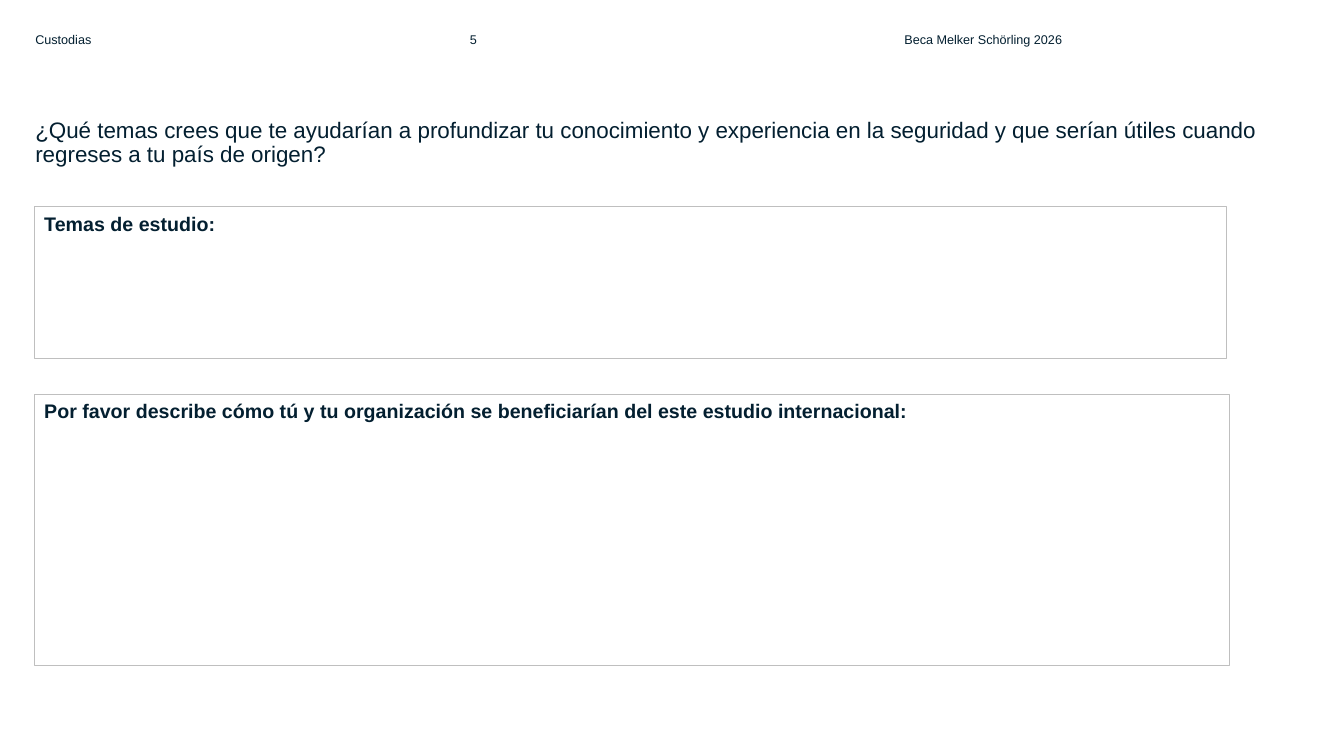
from pptx import Presentation
from pptx.dml.color import RGBColor
from pptx.enum.shapes import MSO_SHAPE
from pptx.enum.text import MSO_ANCHOR, MSO_AUTO_SIZE, PP_ALIGN
from pptx.util import Inches, Pt

RECT = MSO_SHAPE.RECTANGLE
TOP = MSO_ANCHOR.TOP
LEFT = PP_ALIGN.LEFT
NO_FIT = MSO_AUTO_SIZE.NONE
COLORS = {"text": "031F30", "border": "BFBFBF"}
TITLE_ONLY = 5
MARGIN = 0.35


def write(sp, text, size, bold=False, inset=True):
    """Put one left-aligned, top-anchored paragraph in a shape."""
    tf = sp.text_frame
    tf.auto_size = NO_FIT
    tf.word_wrap = True
    tf.vertical_anchor = TOP
    if not inset:
        tf.margin_left = tf.margin_right = tf.margin_top = tf.margin_bottom = 0
    p = tf.paragraphs[0]
    p.text = text
    p.alignment = LEFT
    p.font.name = "Arial"
    p.font.size = Pt(size)
    p.font.bold = bold
    p.font.color.rgb = RGBColor.from_string(COLORS["text"])
    return p


prs = Presentation()
prs.slide_width = Inches(13.33)
prs.slide_height = Inches(7.5)
s = prs.slides.add_slide(prs.slide_layouts[TITLE_ONLY])

# Title
title = s.shapes.title
title.left, title.top = Inches(MARGIN), Inches(1.18)
title.width, title.height = Inches(12.62), Inches(0.66)
p = write(
    title,
    "¿Qué temas crees que te ayudarían a profundizar tu conocimiento y experiencia "
    "en la seguridad y que serían útiles cuando regreses a tu país de origen?",
    16,
    inset=False,
)
p.line_spacing = 0.9

# Header: three equal columns
HEADER_STEP = 4.31
header = [("Custodias", 2.52), ("5", 0.8), ("Beca Melker Schörling 2026", 2.94)]
for col, (text, width) in enumerate(header):
    sp = s.shapes.add_textbox(
        Inches(MARGIN + col * HEADER_STEP), Inches(0.32), Inches(width), Inches(0.63)
    )
    write(sp, text, 9, inset=False)

# Answer boxes: prompt, top, width, height
answers = [
    ("Temas de estudio:", 2.05, 11.82, 1.51),
    ("Por favor describe cómo tú y tu organización se beneficiarían del este "
     "estudio internacional:", 3.91, 11.85, 2.69),
]
for prompt, top, width, height in answers:
    sp = s.shapes.add_shape(
        RECT, Inches(0.34), Inches(top), Inches(width), Inches(height)
    )
    sp.shadow.inherit = False
    sp.fill.background()
    sp.line.color.rgb = RGBColor.from_string(COLORS["border"])
    sp.line.width = Pt(0.75)
    write(sp, prompt, 14, bold=True)

prs.save("out.pptx")
